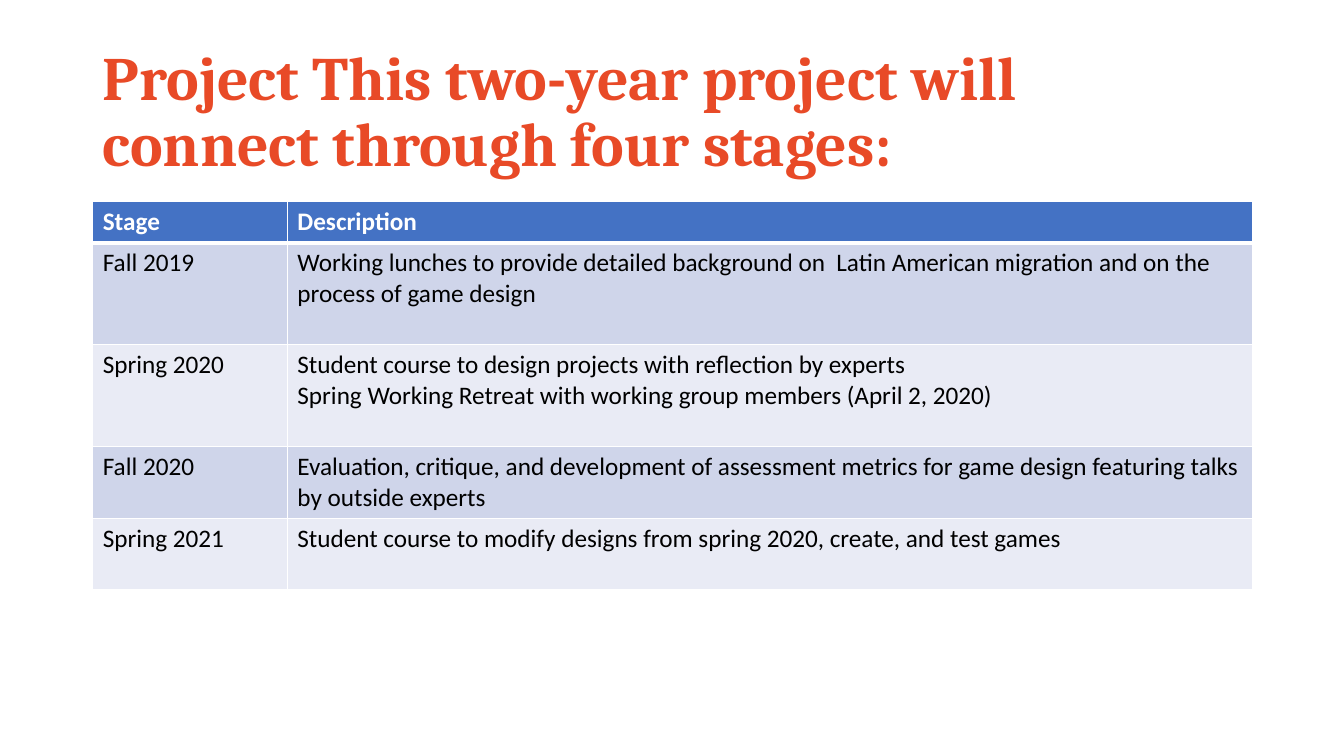
"""Build the slide listing the four stages of the two-year project."""
from lxml.etree import SubElement
from pptx import Presentation
from pptx.dml.color import RGBColor
from pptx.enum.text import MSO_ANCHOR, MSO_AUTO_SIZE, PP_ALIGN
from pptx.oxml.ns import qn
from pptx.util import Inches, Pt

COLORS = {
    "heading": "E84A27",
    "header": "4472C4",
    "odd": "CFD5EA",
    "even": "E9EBF5",
    "white": "FFFFFF",
    "black": "000000",
}
STAGES = [
    ("Stage", "Description"),
    ("Fall 2019", "Working lunches to provide detailed background on  Latin American "
                  "migration and on the process of game design"),
    ("Spring 2020", "Student course to design projects with reflection by experts\n"
                    "Spring Working Retreat with working group members (April 2, 2020)"),
    ("Fall 2020", "Evaluation, critique, and development of assessment metrics for "
                  "game design featuring talks by outside experts"),
    ("Spring 2021", "Student course to modify designs from spring 2020, create, and test games"),
]
COLUMN_WIDTHS = [1.93, 9.57]
ROW_HEIGHTS = [0.41, 1.01, 1.01, 0.71, 0.71]


def write(frame, text, *, font="Calibri", size=18, color="black", bold=False, spacing=1.0):
    """Fill a text frame with left-aligned, formatted paragraphs."""
    frame.text = text
    for paragraph in frame.paragraphs:
        paragraph.alignment = PP_ALIGN.LEFT
        paragraph.line_spacing = spacing
        for run in paragraph.runs:
            run.font.name = font
            run.font.size = Pt(size)
            run.font.bold = bold
            run.font.color.rgb = RGBColor.from_string(COLORS[color])


def add_borders(cell, bottom, top):
    """Draw white borders on a cell, with widths in points."""
    properties = cell._tc.get_or_add_tcPr()
    for side, width in (("L", 1), ("R", 1), ("T", top), ("B", bottom)):
        line = SubElement(properties, qn(f"a:ln{side}"), w=str(Pt(width)))
        fill = SubElement(line, qn("a:solidFill"))
        SubElement(fill, qn("a:srgbClr"), val=COLORS["white"])


prs = Presentation()
prs.slide_width = Inches(13.33)
prs.slide_height = Inches(7.5)
slide = prs.slides.add_slide(prs.slide_layouts[5])

heading = slide.shapes.title
heading.left, heading.top = Inches(0.92), Inches(0.4)
heading.width, heading.height = Inches(11.5), Inches(1.45)
heading.text_frame.word_wrap = True
heading.text_frame.auto_size = MSO_AUTO_SIZE.NONE
heading.text_frame.vertical_anchor = MSO_ANCHOR.MIDDLE
write(heading.text_frame, "Project This two-year project will connect through four stages:",
      font="Cambria", size=44, color="heading", bold=True, spacing=0.9)

schedule = slide.shapes.add_table(
    len(STAGES), len(COLUMN_WIDTHS), Inches(0.92), Inches(2),
    Inches(sum(COLUMN_WIDTHS)), Inches(sum(ROW_HEIGHTS))).table
for column, width in zip(schedule.columns, COLUMN_WIDTHS):
    column.width = Inches(width)

for index, (stage, height) in enumerate(zip(STAGES, ROW_HEIGHTS)):
    schedule.rows[index].height = Inches(height)
    is_header = index == 0
    band = "header" if is_header else "odd" if index % 2 else "even"
    for cell, text in zip(schedule.rows[index].cells, stage):
        add_borders(cell, bottom=3 if is_header else 1, top=3 if index == 1 else 1)
        cell.fill.solid()
        cell.fill.fore_color.rgb = RGBColor.from_string(COLORS[band])
        write(cell.text_frame, text, color="white" if is_header else "black", bold=is_header)

prs.save("out.pptx")
